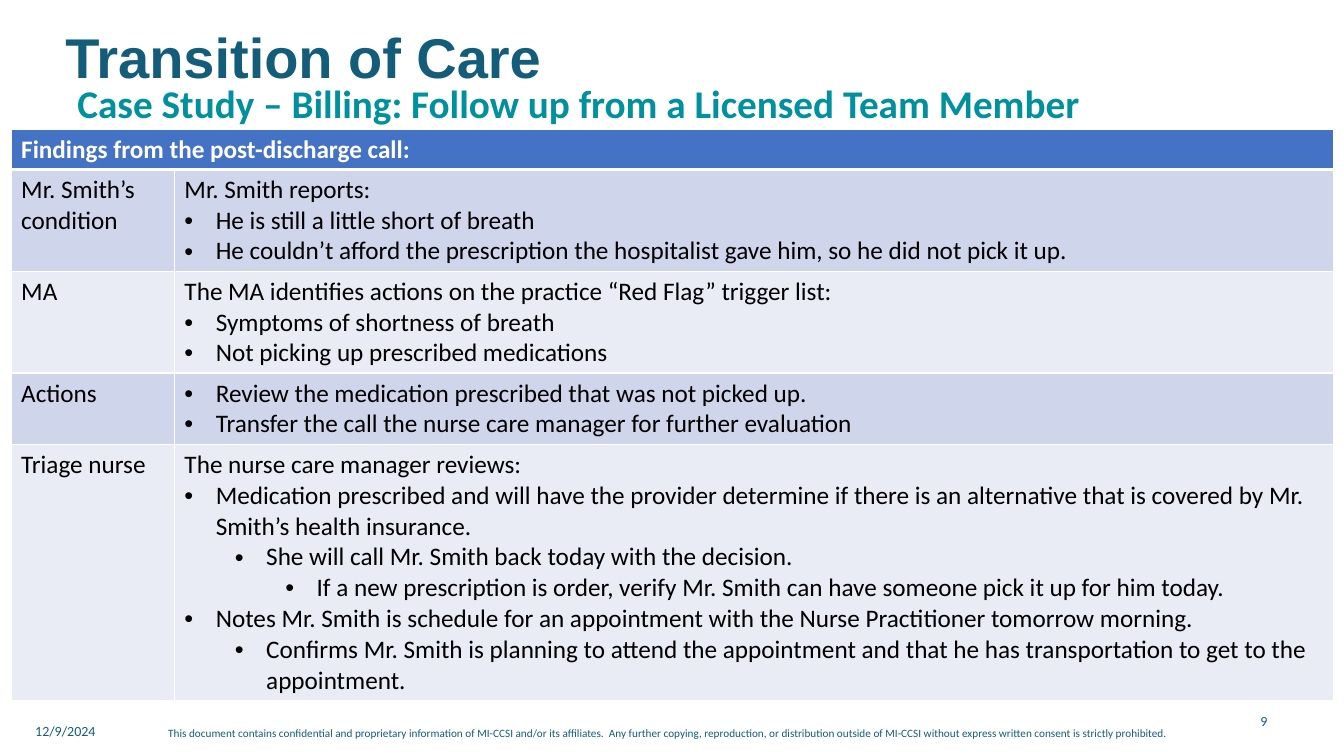
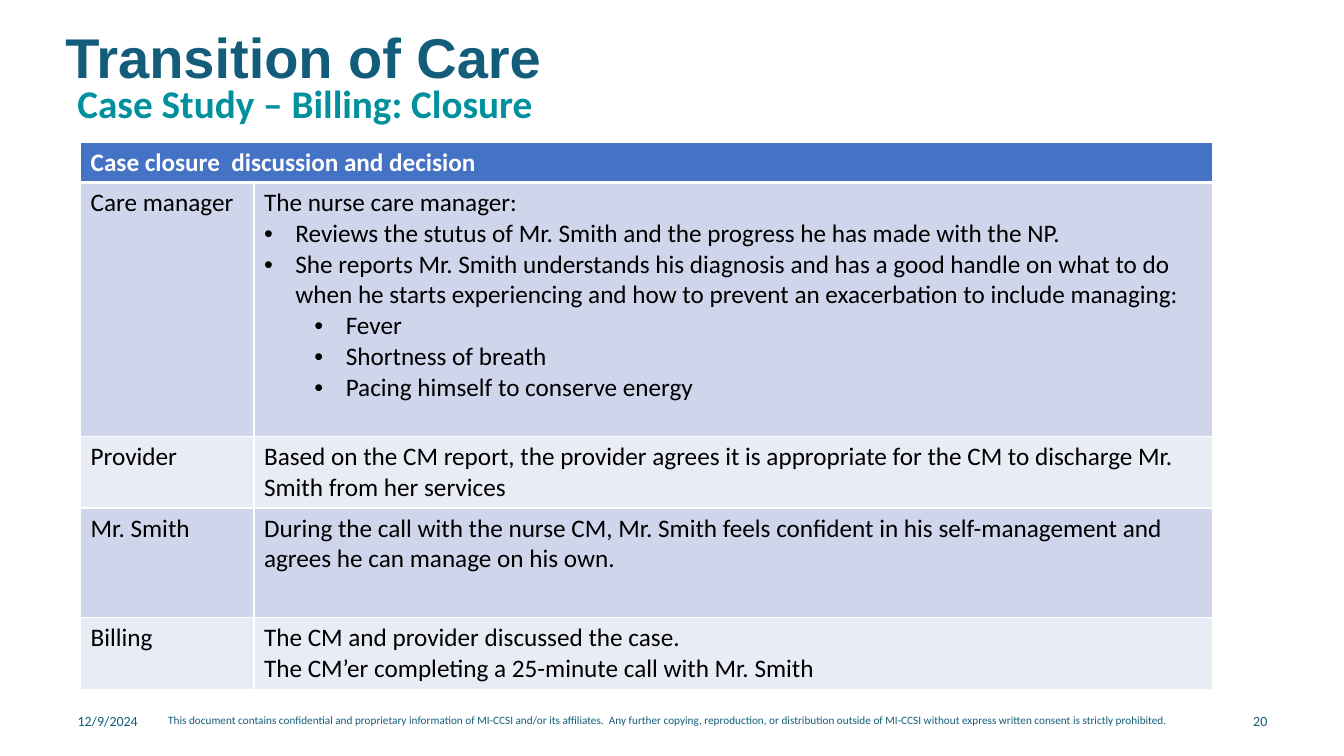
from lxml.etree import SubElement
from pptx import Presentation
from pptx.dml.color import RGBColor
from pptx.enum.text import MSO_ANCHOR, PP_ALIGN
from pptx.oxml.ns import qn
from pptx.util import Inches, Pt

NAVY, TEAL, BLUE = "135D7A", "00909E", "4472C4"
WHITE, BLACK = "FFFFFF", "000000"
BANDS = ("CFD5EA", "E9EBF5")

HEADING = "Transition of Care"
DATE = "12/9/2024"
NOTICE = (
    "This document contains confidential and proprietary information of MI-CCSI and/or its affiliates.  "
    "Any further copying, reproduction, or distribution outside of MI-CCSI without express written consent "
    "is strictly prohibited."
)

STYLES = {
    "title": ({"name": "Arial", "size": Pt(40), "bold": True}, NAVY),
    "subtitle": ({"name": "Calibri", "size": Pt(28), "bold": True}, TEAL),
    "footer": ({"name": "Calibri", "size": Pt(10), "bold": False}, NAVY),
    "notice": ({"name": "Calibri", "size": Pt(8), "bold": False}, NAVY),
    "header": ({"name": "Calibri", "size": Pt(18), "bold": True}, WHITE),
    "body": ({"name": "Calibri", "size": Pt(18), "bold": False}, BLACK),
}


def colour(hex_code):
    return RGBColor.from_string(hex_code)


class Deck:
    hanging, step = 2.33, 3.75

    def __init__(self):
        self.prs = Presentation()
        self.prs.slide_width, self.prs.slide_height = Inches(13.333), Inches(7.5)
        self.slide = None

    def across(self, percent):
        return round(self.prs.slide_width * percent / 100)

    def down(self, percent):
        return round(self.prs.slide_height * percent / 100)

    def styled_run(self, paragraph, words, style):
        run = paragraph.add_run()
        run.text = words
        settings, hex_code = STYLES[style]
        for name, value in settings.items():
            setattr(run.font, name, value)
        run.font.color.rgb = colour(hex_code)

    def text(self, words, style, x, y, w, h, anchor=MSO_ANCHOR.TOP, **layout):
        box = self.slide.shapes.add_textbox(
            self.across(x), self.down(y), self.across(w), self.down(h))
        frame = box.text_frame
        frame.word_wrap = True
        frame.vertical_anchor = anchor
        paragraph = frame.paragraphs[0]
        for name, value in layout.items():
            setattr(paragraph, name, value)
        self.styled_run(paragraph, words, style)

    def page(self, subtitle, number, date_at, notice_y):
        self.slide = self.prs.slides.add_slide(self.prs.slide_layouts[6])
        self.text(HEADING, "title", 4.13, 3.33, 88.13, 8.27, line_spacing=0.9)
        self.text(subtitle, "subtitle", 5.03, 5.47, 87.45, 12,
                  MSO_ANCHOR.BOTTOM, line_spacing=0.9)
        self.text(DATE, "footer", *date_at, 7.58, 5.33, MSO_ANCHOR.MIDDLE)
        self.text(number, "footer", 87.45, 92.67, 7.58, 5.33,
                  MSO_ANCHOR.MIDDLE, alignment=PP_ALIGN.RIGHT)
        self.text(NOTICE, "notice", 11.78, notice_y, 76.5, 4.27)

    def bullet(self, paragraph, depth):
        paragraph.level = depth - 1
        properties = paragraph._p.get_or_add_pPr()
        margin = self.hanging + self.step * (depth - 1)
        properties.set("marL", str(self.across(margin)))
        properties.set("indent", str(-self.across(self.hanging)))
        SubElement(properties, qn("a:buFont"), typeface="Arial")
        SubElement(properties, qn("a:buChar"), char="•")

    def cell(self, cell, lines, style, fill, top=1, bottom=1):
        properties = cell._tc.get_or_add_tcPr()
        for side, width in {"L": 1, "R": 1, "T": top, "B": bottom}.items():
            border = SubElement(properties, qn(f"a:ln{side}"), w=str(Pt(width)))
            SubElement(SubElement(border, qn("a:solidFill")), qn("a:srgbClr"), val=WHITE)
        cell.fill.solid()
        cell.fill.fore_color.rgb = colour(fill)
        for index, (depth, words) in enumerate(lines):
            frame = cell.text_frame
            paragraph = frame.add_paragraph() if index else frame.paragraphs[0]
            if depth:
                self.bullet(paragraph, depth)
            self.styled_run(paragraph, words, style)

    def table(self, x, y, widths, heights, header, topics):
        table = self.slide.shapes.add_table(
            len(heights), len(widths), self.across(x), self.down(y),
            self.across(sum(widths)), self.down(sum(heights))).table
        for column, width in zip(table.columns, widths):
            column.width = self.across(width)
        for row, height in zip(table.rows, heights):
            row.height = self.down(height)
        self.cell(table.cell(0, 0), [(0, header)], "header", BLUE, bottom=3)
        self.cell(table.cell(0, 1), [], "header", BLUE, bottom=3)
        table.cell(0, 0).merge(table.cell(0, 1))
        for index, (topic, details) in enumerate(topics):
            for column, lines in enumerate(([(0, topic)], details)):
                self.cell(table.cell(index + 1, column), lines, "body",
                          BANDS[index % 2], top=1 if index else 3)


FINDINGS = [
    ("Mr. Smith’s condition", [
        (0, "Mr. Smith reports:"),
        (1, "He is still a little short of breath"),
        (1, "He couldn’t afford the prescription the hospitalist gave him, so he did not pick it up."),
    ]),
    ("MA", [
        (0, "The MA identifies actions on the practice “Red Flag” trigger list:"),
        (1, "Symptoms of shortness of breath"),
        (1, "Not picking up prescribed medications"),
    ]),
    ("Actions", [
        (1, "Review the medication prescribed that was not picked up."),
        (1, "Transfer the call the nurse care manager for further evaluation"),
    ]),
    ("Triage nurse", [
        (0, "The nurse care manager reviews:"),
        (1, "Medication prescribed and will have the provider determine if there is an alternative "
            "that is covered by Mr. Smith’s health insurance."),
        (2, "She will call Mr. Smith back today with the decision."),
        (3, "If a new prescription is order, verify Mr. Smith can have someone pick it up for him today."),
        (1, "Notes Mr. Smith is schedule for an appointment with the Nurse Practitioner tomorrow morning."),
        (2, "Confirms Mr. Smith is planning to attend the appointment and that he has transportation "
            "to get to the appointment."),
    ]),
]

CLOSURE = [
    ("Care manager", [
        (0, "The nurse care manager:"),
        (1, "Reviews the stutus of Mr. Smith and the progress he has made with the NP."),
        (1, "She reports Mr. Smith understands his diagnosis and has a good handle on what to do "
            "when he starts experiencing and how to prevent an exacerbation to include managing:"),
        (2, "Fever"),
        (2, "Shortness of breath"),
        (2, "Pacing himself to conserve energy"),
    ]),
    ("Provider", [
        (0, "Based on the CM report, the provider agrees it is appropriate for the CM to discharge "
            "Mr. Smith from her services"),
    ]),
    ("Mr. Smith", [
        (0, "During the call with the nurse CM, Mr. Smith feels confident in his self-management "
            "and agrees he can manage on his own."),
    ]),
    ("Billing", [
        (0, "The CM and provider discussed the case."),
        (0, "The CM’er completing a 25-minute call with Mr. Smith"),
    ]),
]


def main():
    deck = Deck()
    deck.page("Case Study – Billing: Follow up from a Licensed Team Member", "9", (1.88, 94), 95.47)
    deck.table(0.83, 17.07, (12.15, 86.25), (5.07, 13.47, 13.47, 9.47, 33.87),
               "Findings from the post-discharge call:", FINDINGS)
    deck.page("Case Study – Billing: Closure", "20", (5.03, 92.67), 93.73)
    deck.table(6, 18.8, (12.9, 71.33), (5.33, 33.6, 9.47, 14.53, 9.47),
               "Case closure  discussion and decision", CLOSURE)
    deck.prs.save("out.pptx")


if __name__ == "__main__":
    main()
